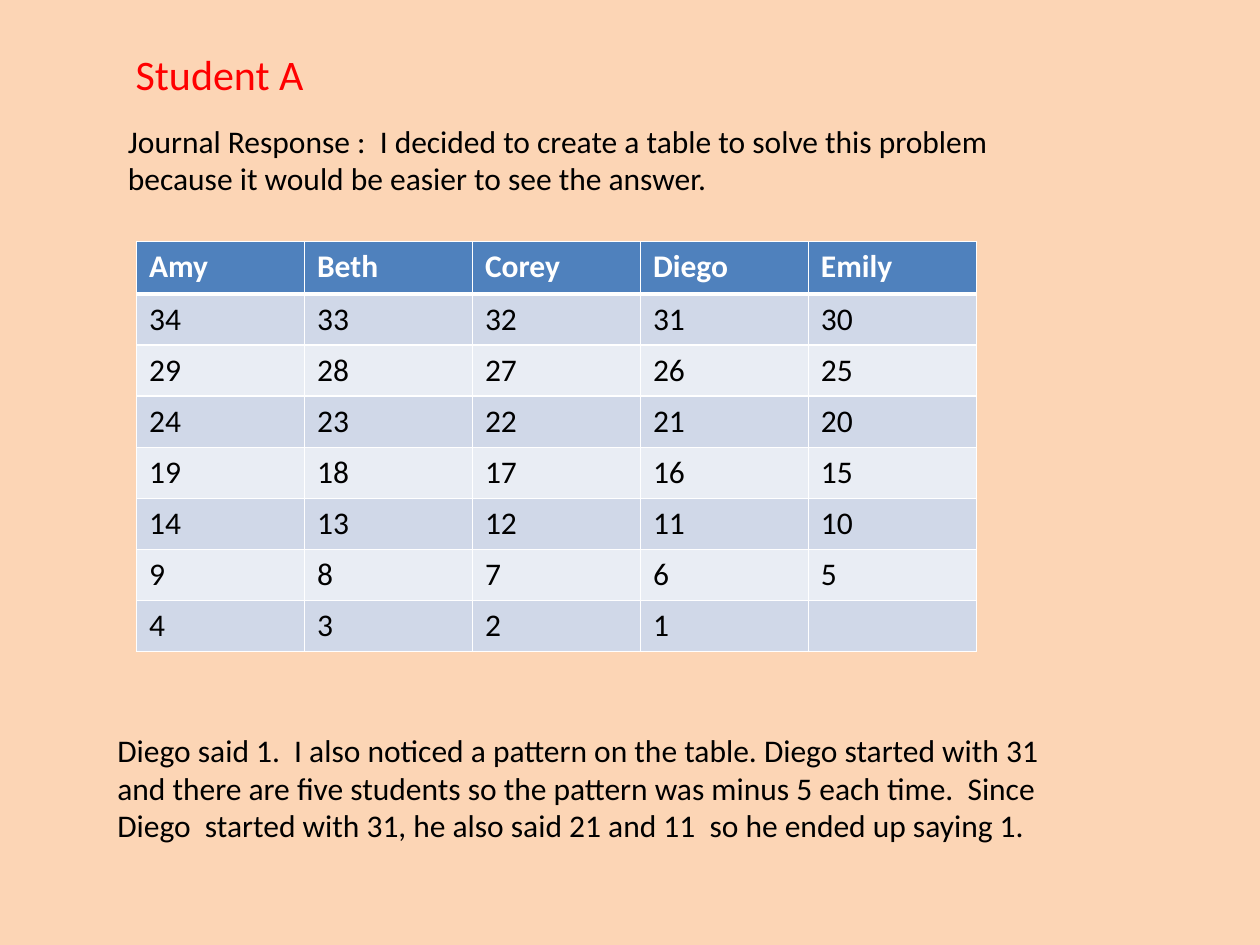
import pptx
import pptx.dml.color
import pptx.enum.text
import pptx.oxml
import pptx.oxml.ns
import pptx.util

Pt = pptx.util.Pt


def color(hex_code):
    return pptx.dml.color.RGBColor.from_string(hex_code)


def write(frame, text, size=18, ink="000000", bold=False):
    """Add one formatted run to the first paragraph of a text frame."""
    span = frame.paragraphs[0].add_run()
    span.text = text
    span.font.name = "Calibri"
    span.font.size = Pt(size)
    span.font.bold = bold
    span.font.color.rgb = color(ink)


deck = pptx.Presentation()
deck.slide_width, deck.slide_height = Pt(720), Pt(540)
page = deck.slides.add_slide(deck.slide_layouts[5])
page.background.fill.solid()
page.background.fill.fore_color.rgb = color("FCD5B5")

# Title, indented to line up with the table
title = page.shapes.title
title.left, title.top, title.width, title.height = Pt(54), Pt(24), Pt(127.5), Pt(36)
frame = title.text_frame
frame.word_wrap = False
frame.auto_size = pptx.enum.text.MSO_AUTO_SIZE.NONE
frame.vertical_anchor = pptx.enum.text.MSO_ANCHOR.TOP
frame.margin_left = Pt(23.5)
frame.paragraphs[0].alignment = pptx.enum.text.PP_ALIGN.LEFT
write(frame, "Student A", size=24, ink="FF0000")

# Journal text above and below the table
journal = [
    (66, 66, 516, "Journal Response :  I decided to create a table to solve this problem "
     "because it would be easier to see the answer."),
    (60, 414, 570, "Diego said 1.  I also noticed a pattern on the table. Diego started with 31 "
     "and there are five students so the pattern was minus 5 each time.  Since "
     "Diego  started with 31, he also said 21 and 11  so he ended up saying 1."),
]
for left, top, width, text in journal:
    box = page.shapes.add_textbox(Pt(left), Pt(top), Pt(width), Pt(72.7))
    box.text_frame.word_wrap = True
    write(box.text_frame, text)

# Table: the students count down from 34 to 1, five numbers to a row
students = ["Amy", "Beth", "Corey", "Diego", "Emily"]
rows = [students]
for start in range(34, 0, -len(students)):
    rows.append([str(start - turn) if start > turn else "" for turn in range(len(students))])

table = page.shapes.add_table(len(rows), len(students), Pt(78), Pt(138), Pt(480), Pt(234.4)).table
for column in table.columns:
    column.width = Pt(96)
for row_index, values in enumerate(rows):
    header = row_index == 0
    table.rows[row_index].height = Pt(30 if header else 29.2)
    fill = "4F81BD" if header else ("E9EDF4", "D0D8E8")[row_index % 2]
    widths = {"lnL": 1, "lnR": 1, "lnT": 3 if row_index == 1 else 1, "lnB": 3 if header else 1}
    for column_index, value in enumerate(values):
        cell = table.cell(row_index, column_index)
        properties = cell._tc.get_or_add_tcPr()
        for side, width in widths.items():
            properties.append(pptx.oxml.parse_xml(
                f'<a:{side} {pptx.oxml.ns.nsdecls("a")} w="{Pt(width)}">'
                f'<a:solidFill><a:srgbClr val="FFFFFF"/></a:solidFill></a:{side}>'))
        cell.fill.solid()
        cell.fill.fore_color.rgb = color(fill)
        if value:
            write(cell.text_frame, value, ink="FFFFFF" if header else "000000", bold=header)

deck.save("out.pptx")
